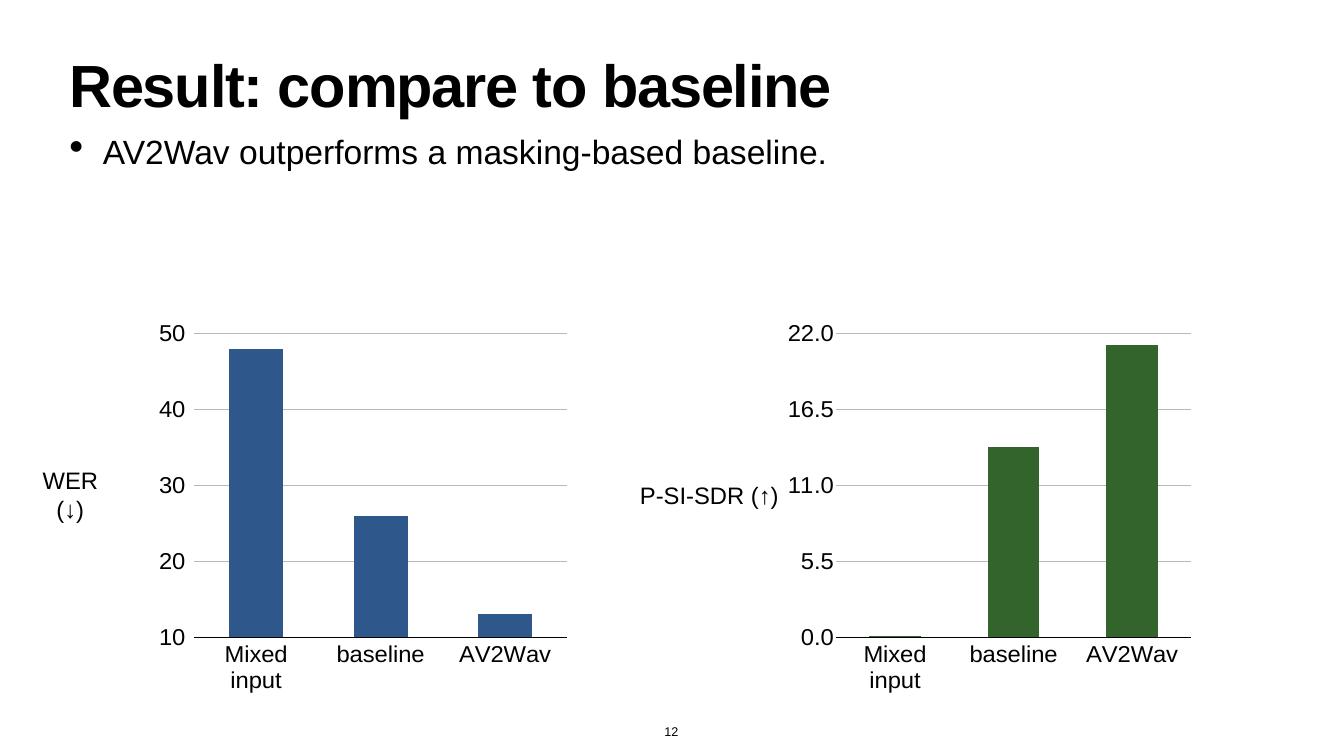
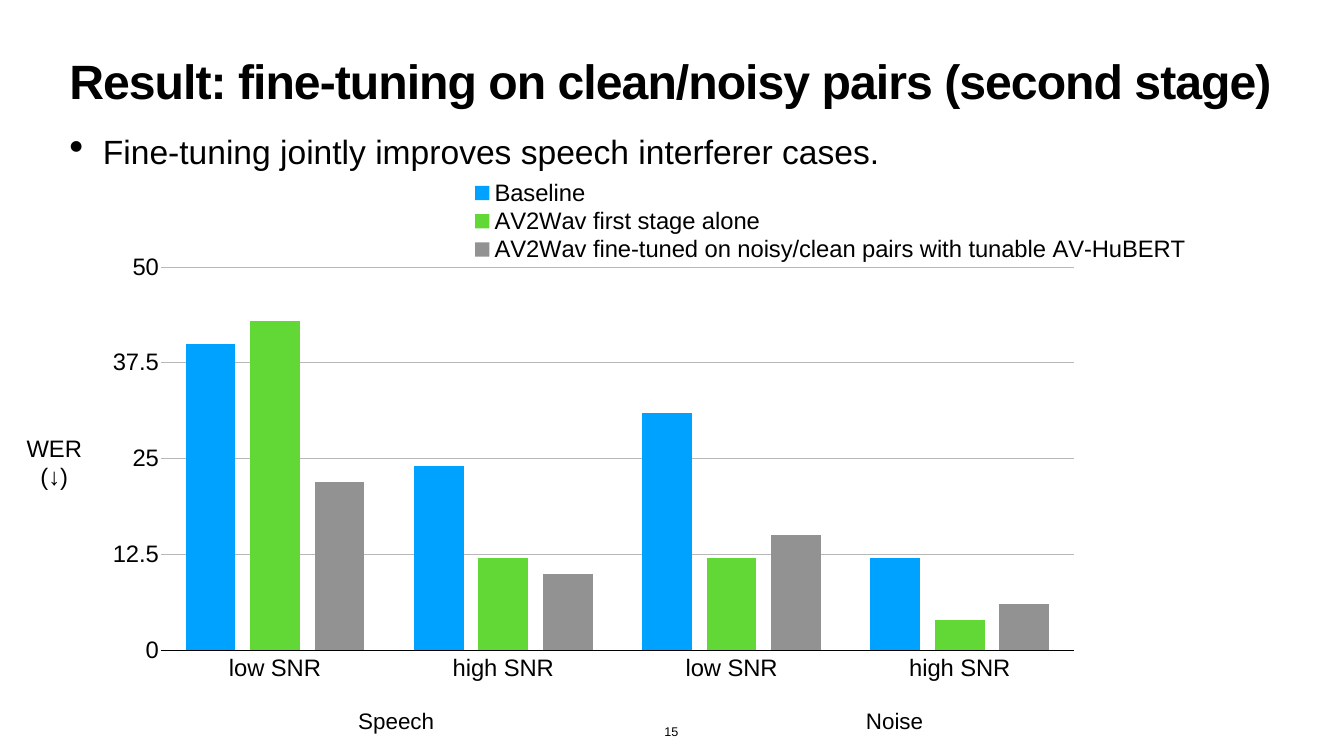
from lxml import etree
from pptx import Presentation
from pptx.chart.data import CategoryChartData
from pptx.dml.color import RGBColor
from pptx.enum.chart import XL_CHART_TYPE, XL_LEGEND_POSITION, XL_TICK_LABEL_POSITION, XL_TICK_MARK
from pptx.enum.text import MSO_ANCHOR, MSO_AUTO_SIZE, PP_ALIGN
from pptx.oxml.ns import qn
from pptx.util import Pt

COLUMN = XL_CHART_TYPE.COLUMN_CLUSTERED
TOP_KEY = XL_LEGEND_POSITION.TOP
LOW = XL_TICK_LABEL_POSITION.LOW
NO_TICK = XL_TICK_MARK.NONE
TOP, MIDDLE, BOTTOM = MSO_ANCHOR.TOP, MSO_ANCHOR.MIDDLE, MSO_ANCHOR.BOTTOM
FIT = MSO_AUTO_SIZE.SHAPE_TO_FIT_TEXT
CENTER = PP_ALIGN.CENTER

BLACK = RGBColor(0x00, 0x00, 0x00)
GREY = RGBColor(0x5E, 0x5E, 0x5E)
GRID = RGBColor(0xB8, 0xB8, 0xB8)
NAVY = RGBColor(0x2E, 0x57, 0x8C)
FOREST = RGBColor(0x32, 0x64, 0x2C)
BLUE = RGBColor(0x00, 0xA2, 0xFF)
GREEN = RGBColor(0x61, 0xD8, 0x36)
SILVER = RGBColor(0x92, 0x92, 0x92)

FACE = "Arial"
WIDE, HIGH = 1920, 1080
LEFT, SPAN = 95.04, 1730.16
INSET = 4
LABEL = 34


def set_font(font, size, color=BLACK, bold=False):
    font.name = FACE
    font.size = Pt(size)
    font.bold = bold
    font.color.rgb = color


def add_box(slide, text, box, anchor=TOP):
    shape = slide.shapes.add_textbox(*map(Pt, box))
    frame = shape.text_frame
    frame.word_wrap = True
    frame.vertical_anchor = anchor
    frame.margin_left = frame.margin_right = Pt(INSET)
    frame.margin_top = frame.margin_bottom = Pt(INSET)
    para = frame.paragraphs[0]
    para.text = text
    return frame, para


def add_title(slide, text, size):
    _, para = add_box(slide, text, (LEFT, 85, SPAN, 113))
    para.line_spacing = 0.8
    set_font(para.font, size, bold=True)
    props = para._p.get_or_add_pPr().find(qn("a:defRPr"))
    props.set("spc", str(round(-2 * size)))


def add_bullet(slide, text):
    _, para = add_box(slide, text, (LEFT, 189.5, SPAN, 650))
    para.line_spacing = 0.9
    para.space_before = Pt(45)
    props = para._p.get_or_add_pPr()
    props.set("marL", str(Pt(48)))
    props.set("indent", str(-Pt(48)))
    etree.SubElement(props, qn("a:buSzPct")).set("val", "123000")
    etree.SubElement(props, qn("a:buChar")).set("char", "•")
    set_font(para.font, 48)


def add_label(slide, text, box, size=LABEL, anchor=MIDDLE):
    frame, para = add_box(slide, text, box, anchor)
    frame.word_wrap = False
    frame.auto_size = FIT
    para.alignment = CENTER
    set_font(para.font, size)


def add_slide(deck, title, size, point, number):
    slide = deck.slides.add_slide(deck.slide_layouts[6])
    add_title(slide, title, size)
    add_bullet(slide, point)
    add_label(slide, number, (944.6, 1030, 29, 29.5), 18, BOTTOM)
    return slide


def set_layout(parent, index, area, inner=False):
    for old in parent.findall(qn("c:layout")):
        parent.remove(old)
    layout = etree.Element(qn("c:layout"))
    manual = etree.SubElement(layout, qn("c:manualLayout"))
    rules = [("layoutTarget", "inner")] if inner else []
    rules += [("xMode", "edge"), ("yMode", "edge")]
    rules += zip("xywh", area)
    for tag, value in rules:
        etree.SubElement(manual, qn("c:" + tag)).set("val", str(value))
    parent.insert(index, layout)


def add_bars(slide, box, cats, series, scale, form, plot, gap, lap):
    data = CategoryChartData()
    data.categories = cats
    for name, values, _ in series:
        data.add_series(name, values)
    chart = slide.shapes.add_chart(COLUMN, *map(Pt, box), data).chart
    chart.has_title = False
    chart.has_legend = False
    set_font(chart.font, 10, GREY)

    bars = chart.plots[0]
    bars.gap_width = gap
    bars.overlap = lap
    bars.vary_by_categories = False
    for item, (_, _, color) in zip(bars.series, series):
        item.invert_if_negative = False
        item.format.fill.solid()
        item.format.fill.fore_color.rgb = color

    base, side = chart.category_axis, chart.value_axis
    for axis in (base, side):
        axis.major_tick_mark = axis.minor_tick_mark = NO_TICK
        set_font(axis.tick_labels.font, LABEL)
    base.tick_label_position = LOW
    base.format.line.color.rgb = BLACK
    base.format.line.width = Pt(1)

    side.minimum_scale, side.maximum_scale, side.major_unit = scale
    side.tick_labels.number_format = form
    side.tick_labels.number_format_is_linked = False
    side.format.line.fill.background()
    side.has_major_gridlines = True
    line = side.major_gridlines.format.line
    line.color.rgb = GRID
    line.width = Pt(1)

    area = chart._chartSpace.find(".//" + qn("c:plotArea"))
    set_layout(area, 0, plot, True)
    return chart


def add_key(chart, area):
    chart.has_legend = True
    key = chart.legend
    key.position = TOP_KEY
    key.include_in_layout = True
    set_font(key.font, LABEL)
    set_layout(key._element, 1, area)


def compare(deck):
    slide = add_slide(deck, "Result: compare to baseline", 85,
                      "AV2Wav outperforms a masking-based baseline.", "12")
    cats = ["Mixed input", "baseline", "AV2Wav"]
    panels = [
        ((210, 439, 603.5, 552), (48, 26, 13), NAVY, (10, 50, 10),
         r"#,##0_);\(#,##0\)", (0.111, 0.071, 0.884, 0.813)),
        ((1101.6, 439, 603.5, 552), (0.1, 13.8, 21.2), FOREST, (0, 22, 5.5),
         "0.0", (0.153, 0.071, 0.842, 0.813)),
    ]
    for box, values, color, scale, form, plot in panels:
        add_bars(slide, box, cats, [("Series 1", values, color)],
                 scale, form, plot, 130, -10)
    add_label(slide, "WER (↓)", (34, 682.5, 133, 48))
    add_label(slide, "P-SI-SDR (↑)", (910, 682.5, 206.6, 48))


def tune(deck):
    slide = add_slide(deck, "Result: fine-tuning on clean/noisy pairs (second stage)", 68.8,
                      "Fine-tuning jointly improves speech interferer cases.", "15")
    series = [
        ("Baseline", (40, 24, 31, 12), BLUE),
        ("AV2Wav first stage alone", (43, 12, 12, 4), GREEN),
        ("AV2Wav fine-tuned on noisy/clean pairs with tunable AV-HuBERT",
         (22, 10, 15, 6), SILVER),
    ]
    chart = add_bars(slide, (137, 248.4, 1626.5, 747.4), ["low SNR", "high SNR"] * 2,
                     series, (0, 50, 12.5), "General",
                     (0.057, 0.178, 0.802, 0.733), 100, -30)
    add_key(chart, (0.325, 0.008, 0.64, 0.165))
    add_label(slide, "Speech", (507, 1006.5, 118, 45.4), 32)
    add_label(slide, "Noise", (1232.6, 1006.5, 90.7, 45.4), 32)
    add_label(slide, "WER (↓)", (11, 635.8, 133, 48))


def main():
    deck = Presentation()
    deck.slide_width, deck.slide_height = Pt(WIDE), Pt(HIGH)
    compare(deck)
    tune(deck)
    deck.save("out.pptx")


if __name__ == "__main__":
    main()
